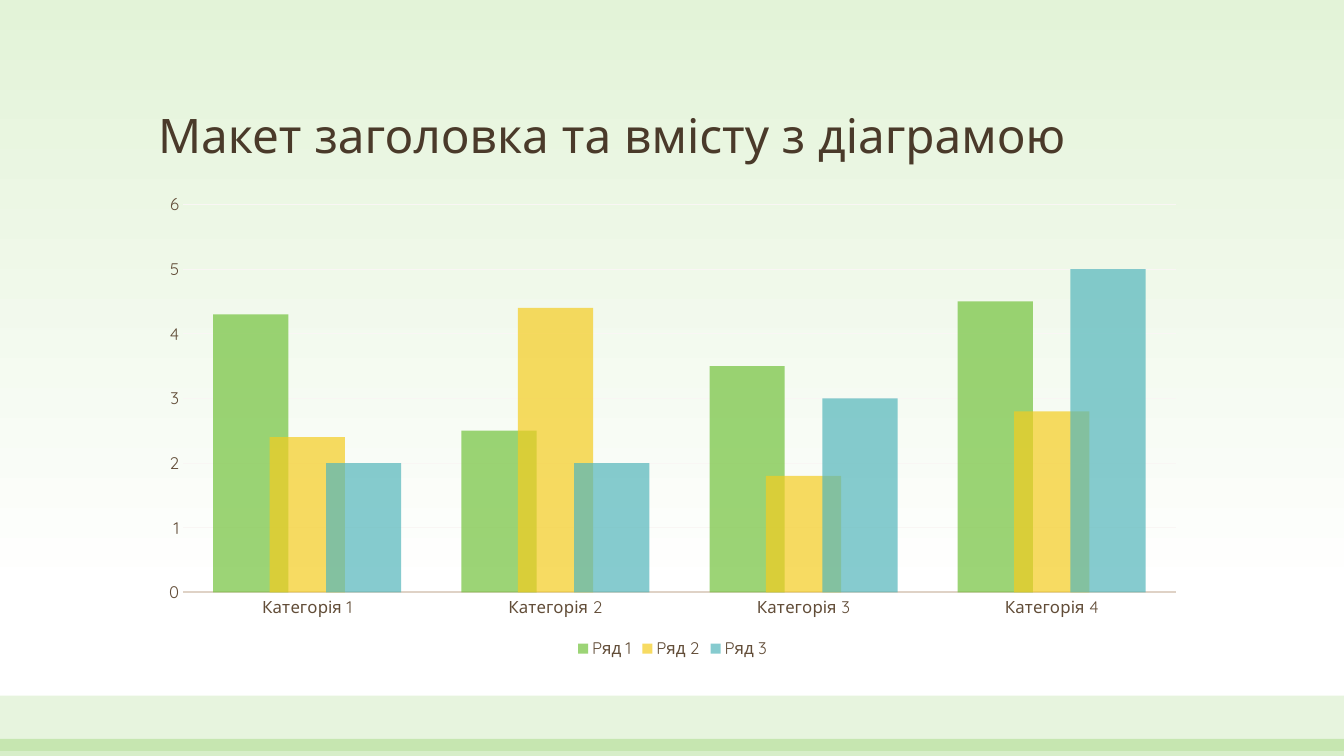
import lxml.etree
import pptx
import pptx.util
import pptx.chart.data
import pptx.dml.color
import pptx.enum.chart
import pptx.enum.shapes
import pptx.enum.text
import pptx.oxml.ns
from pptx.util import Inches

RGBColor = pptx.dml.color.RGBColor
GREEN = RGBColor(0x72, 0xC2, 0x3C)
YELLOW = RGBColor(0xF4, 0xCC, 0x20)
TEAL = RGBColor(0x53, 0xB6, 0xBB)
PALE_GREEN = RGBColor(0xE3, 0xF3, 0xD8)
WHITE = RGBColor(0xFF, 0xFF, 0xFF)
TITLE_BROWN = RGBColor(0x4A, 0x3A, 0x2A)
TEXT_BROWN = RGBColor(0x62, 0x4D, 0x38)
AXIS_BEIGE = RGBColor(0xDF, 0xD2, 0xC6)
GRID_BEIGE = RGBColor(0xF9, 0xF6, 0xF4)
FONT = "Quicksand"


def fill_translucent(owner, fill, color, percent):
    fill.solid()
    fill.fore_color.rgb = color
    clr = next(owner._element.iter(pptx.oxml.ns.qn("a:srgbClr")))
    alpha = lxml.etree.SubElement(clr, pptx.oxml.ns.qn("a:alpha"))
    alpha.set("val", str(percent * 1000))


def style_font(font, size, color):
    font.name = FONT
    font.size = pptx.util.Pt(size)
    font.color.rgb = color


prs = pptx.Presentation()
prs.slide_width = Inches(13.33)
prs.slide_height = Inches(7.5)
s = prs.slides.add_slide(prs.slide_layouts[6])

bg = s.background.fill
bg.gradient()
bg.gradient_angle = 270
for stop, color, position in zip(bg.gradient_stops, (PALE_GREEN, WHITE), (0, 0.79)):
    stop.color.rgb = color
    stop.position = position

for top, height, percent in ((6.9, 0.55, 17), (7.33, 0.17, 28)):
    sp = s.shapes.add_shape(pptx.enum.shapes.MSO_SHAPE.RECTANGLE,
                            0, Inches(top), prs.slide_width, Inches(height))
    sp.shadow.inherit = False
    sp.line.fill.background()
    fill_translucent(sp, sp.fill, GREEN, percent)

title = s.shapes.add_textbox(Inches(1.47), Inches(0.48), Inches(10.4), Inches(1.19))
tf = title.text_frame
tf.word_wrap = True
tf.vertical_anchor = pptx.enum.text.MSO_ANCHOR.BOTTOM
tf.text = "Макет заголовка та вмісту з діаграмою"
p = tf.paragraphs[0]
p.line_spacing = 0.9
style_font(p.runs[0].font, 34, TITLE_BROWN)

data = pptx.chart.data.CategoryChartData()
data.categories = [f"Категорія {n}" for n in range(1, 5)]
data.add_series("Pяд 1", (4.3, 2.5, 3.5, 4.5))
data.add_series("Pяд 2", (2.4, 4.4, 1.8, 2.8))
data.add_series("Pяд 3", (2, 2, 3, 5))
chart = s.shapes.add_chart(pptx.enum.chart.XL_CHART_TYPE.COLUMN_CLUSTERED,
                           Inches(1.47), Inches(1.83), Inches(10.4), Inches(4.75),
                           data).chart
chart.has_title = False
style_font(chart.font, 10, TEXT_BROWN)

plot = chart.plots[0]
plot.gap_width = 80
plot.overlap = 25
plot.vary_by_categories = False
for series, color in zip(plot.series, (GREEN, YELLOW, TEAL)):
    fill_translucent(series, series.format.fill, color, 70)

for axis in (chart.category_axis, chart.value_axis):
    axis.major_tick_mark = pptx.enum.chart.XL_TICK_MARK.NONE
    axis.minor_tick_mark = pptx.enum.chart.XL_TICK_MARK.NONE
    style_font(axis.tick_labels.font, 12, TEXT_BROWN)

line = chart.category_axis.format.line
line.color.rgb = AXIS_BEIGE
line.width = pptx.util.Pt(1.25)

values = chart.value_axis
values.minimum_scale = 0
values.maximum_scale = 6
values.major_unit = 1
values.format.line.fill.background()
grid = values.major_gridlines.format.line
grid.color.rgb = GRID_BEIGE
grid.width = pptx.util.Pt(0.75)

chart.has_legend = True
chart.legend.position = pptx.enum.chart.XL_LEGEND_POSITION.BOTTOM
chart.legend.include_in_layout = False
style_font(chart.legend.font, 12, TEXT_BROWN)

prs.save("out.pptx")
